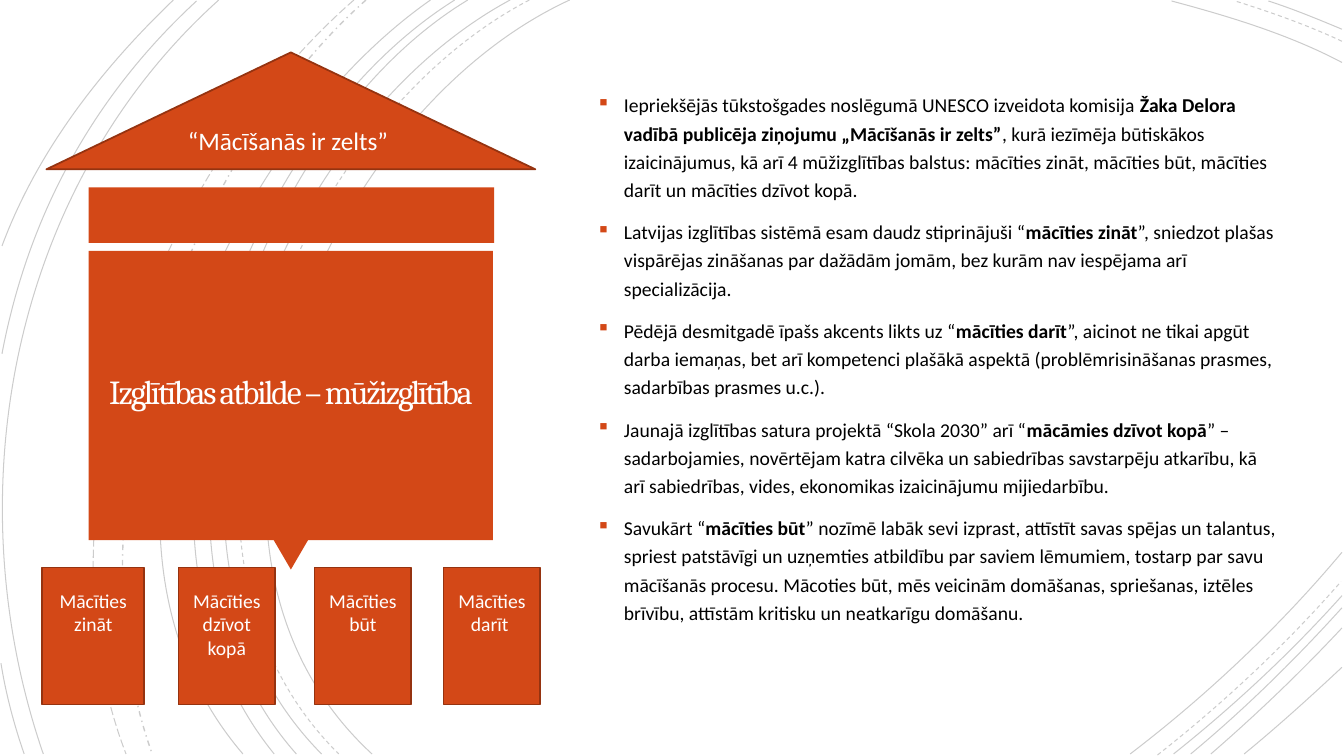
import pptx
import pptx.util
import pptx.dml.color
import pptx.enum.dml
import pptx.enum.shapes
import pptx.enum.text
import pptx.oxml.ns
import lxml.etree

Inches, Pt, qn = pptx.util.Inches, pptx.util.Pt, pptx.oxml.ns.qn
SHAPE = pptx.enum.shapes.MSO_SHAPE
DASH = pptx.enum.dml.MSO_LINE
ANCHOR = pptx.enum.text.MSO_ANCHOR
ALIGN = pptx.enum.text.PP_ALIGN

ORANGE, BROWN, WHITE, BLACK = "D34817", "953310", "FFFFFF", "000000"

# Content
TITLE = "Izglītības atbilde – mūžizglītība"
ROOF = "“Mācīšanās ir zelts” "
PILLARS = [  # left, width, text
    (0.42, 1.01, "Mācīties zināt"),
    (1.77, 0.96, "Mācīties dzīvot kopā"),
    (3.12, 0.96, "Mācīties būt"),
    (4.4, 0.96, "Mācīties darīt "),
]
POINTS = [  # plain, bold, plain
    ("Iepriekšējās tūkstošgades noslēgumā UNESCO izveidota komisija ",
     "Žaka Delora vadībā publicēja ziņojumu „Mācīšanās ir zelts”",
     ", kurā iezīmēja būtiskākos izaicinājumus, kā arī 4 mūžizglītības balstus: "
     "mācīties zināt, mācīties būt, mācīties darīt un mācīties dzīvot kopā."),
    ("Latvijas izglītības sistēmā esam daudz stiprinājuši “", "mācīties zināt",
     "”, sniedzot plašas vispārējas zināšanas par dažādām jomām, "
     "bez kurām nav iespējama arī specializācija. "),
    ("Pēdējā desmitgadē īpašs akcents likts uz “", "mācīties darīt",
     "”, aicinot ne tikai apgūt darba iemaņas, bet arī kompetenci plašākā aspektā "
     "(problēmrisināšanas prasmes, sadarbības prasmes u.c.)."),
    ("Jaunajā izglītības satura projektā “Skola 2030” arī “", "mācāmies dzīvot kopā",
     "” – sadarbojamies, novērtējam katra cilvēka un sabiedrības savstarpēju atkarību, "
     "kā arī sabiedrības, vides, ekonomikas izaicinājumu mijiedarbību. "),
    ("Savukārt “", "mācīties būt",
     "” nozīmē labāk sevi izprast, attīstīt savas spējas un talantus, spriest patstāvīgi "
     "un uzņemties atbildību par saviem lēmumiem, tostarp par savu mācīšanās procesu. "
     "Mācoties būt, mēs veicinām domāšanas, spriešanas, iztēles brīvību, "
     "attīstām kritisku un neatkarīgu domāšanu."),
]

# Background arcs by dash style: start, two control points, end
ARCS = {
    DASH.SOLID: [
        (5.65, 0, 3.15, 1.15, 1.43, 5.4, 3.69, 7.48),
        (5.06, 0, 2.7, 1.27, 1.1, 5.37, 3.19, 7.48),
        (4.64, 0, 2.44, 1.33, 1.1, 5.41, 2.94, 7.48),
        (4.51, 0, 2.31, 1.38, 0.97, 5.33, 2.72, 7.48),
        (4.27, 0, 2.17, 1.47, 0.53, 5.29, 2.41, 7.48),
        (2.17, 0, 0.11, 1.85, -0.46, 4.9, 0.43, 7.48),
        (1.95, 0.01, 0.92, 0.96, 0.28, 2.14, 0.02, 3.51),
        (0.01, 6.58, 0.06, 6.89, 0.14, 7.19, 0.24, 7.48),
        (1.72, 0, 1, 0.69, 0.37, 1.5, 0.02, 2.44),
        (13.31, 0.62, 12.78, 0.34, 12.18, 0.16, 11.62, 0.01),
        (13.31, 0.29, 13.07, 0.19, 12.83, 0.09, 12.58, 0.01),
        (11.21, 7.48, 11.97, 6.9, 12.69, 6.22, 13.31, 5.48),
        (11.64, 7.48, 12.23, 7.01, 12.8, 6.48, 13.31, 5.91),
        (11.81, 7.48, 12.34, 7.04, 12.84, 6.55, 13.31, 6.03),
        (12.01, 7.48, 12.46, 7.09, 12.9, 6.67, 13.31, 6.23),
        (12.34, 7.48, 12.67, 7.21, 12.99, 6.92, 13.31, 6.62),
    ],
    DASH.DASH: [
        (5.25, 0, 2.85, 1.25, 1.23, 5.37, 3.36, 7.48),
        (13.31, 0.41, 12.97, 0.25, 12.6, 0.12, 12.25, 0.01),
        (11.48, 7.49, 12.13, 6.98, 12.75, 6.4, 13.3, 5.77),
    ],
    DASH.DASH_DOT: [(3.63, 0, 1.76, 1.66, 0.65, 5.09, 1.51, 7.48)],
    DASH.LONG_DASH: [(3.51, 0, 1.57, 1.69, 0.29, 4.99, 1.25, 7.48)],
}


def color(value):
    return pptx.dml.color.RGBColor.from_string(value)


def add_arc(numbers, dash):
    lengths = [Inches(number) for number in numbers]
    points = list(zip(lengths[::2], lengths[1::2]))
    builder = page.shapes.build_freeform(*points[0])
    builder.add_line_segments(points[1:], close=False)
    arc = builder.convert_to_shape()
    # Turn the three straight segments into one cubic curve
    segments = list(arc._element.iter(qn("a:lnTo")))
    curve = lxml.etree.Element(qn("a:cubicBezTo"))
    segments[0].addprevious(curve)
    for segment in segments:
        curve.append(segment[0])
        segment.getparent().remove(segment)
    arc.shadow.inherit = False
    arc.fill.background()
    arc.line.color.rgb = color(BLACK)
    arc.line.width = Pt(1 if dash == DASH.DASH_DOT else 0.75)
    arc.line.dash_style = dash
    ink = arc.line._ln.find(".//" + qn("a:srgbClr"))
    lxml.etree.SubElement(ink, qn("a:alpha"), val="20000")


def add_block(kind, left, top, width, height, outline=None):
    block = page.shapes.add_shape(kind, Inches(left), Inches(top), Inches(width), Inches(height))
    block.shadow.inherit = False
    block.fill.solid()
    block.fill.fore_color.rgb = color(ORANGE)
    if outline:
        block.line.color.rgb = color(outline)
        block.line.width = Pt(1.25)
    else:
        block.line.fill.background()
    return block


def style(para, size, font, ink, align=ALIGN.CENTER):
    para.alignment = align
    para.font.size = Pt(size)
    para.font.name = font
    para.font.color.rgb = color(ink)


def write(block, text, size, anchor=ANCHOR.MIDDLE, font="Calibri"):
    frame = block.text_frame
    frame.word_wrap = True
    frame.vertical_anchor = anchor
    para = frame.paragraphs[0]
    para.text = text
    style(para, size, font, WHITE)
    return frame


def add_bullet(para):
    props = para._p.get_or_add_pPr()
    props.set("marL", str(Inches(0.25)))
    props.set("indent", str(Inches(-0.25)))
    bullet_color = lxml.etree.Element(qn("a:buClr"))
    lxml.etree.SubElement(bullet_color, qn("a:srgbClr"), val=ORANGE)
    size = lxml.etree.Element(qn("a:buSzPct"), val="110000")
    face = lxml.etree.Element(qn("a:buFont"), typeface="Wingdings", charset="2")
    mark = lxml.etree.Element(qn("a:buChar"), char="§")  # small square in Wingdings
    # Bullet properties stand between spacing and default run properties
    for position, part in enumerate((bullet_color, size, face, mark), 2):
        props.insert(position, part)


deck = pptx.Presentation()
deck.slide_width, deck.slide_height = Inches(13.33), Inches(7.5)
page = deck.slides.add_slide(deck.slide_layouts[6])

# Background
for dash, arcs in ARCS.items():
    for arc in arcs:
        add_arc(arc, dash)

# House: beam, pointer and wall with the title
add_block(SHAPE.RECTANGLE, 0.88, 1.86, 4.02, 0.55)
pointer = add_block(SHAPE.ISOSCELES_TRIANGLE, 2.71, 5.35, 0.35, 0.3)
pointer.rotation = 180
add_block(SHAPE.RECTANGLE, 0.88, 2.49, 4.01, 2.87)
title = page.shapes.add_textbox(Inches(0.97), Inches(2.56), Inches(3.83), Inches(2.7))
title_para = write(title, TITLE, 24, font="Cambria").paragraphs[0]
title_para.line_spacing = 0.85
title_para.runs[0]._r.get_or_add_rPr().set("spc", "-150")

# Bulleted text
body = page.shapes.add_textbox(Inches(5.84), Inches(0.83), Inches(6.96), Inches(6.16)).text_frame
body.word_wrap = True
for index, parts in enumerate(POINTS):
    para = body.add_paragraph() if index else body.paragraphs[0]
    para.line_spacing = 1.2
    para.space_before = Pt(10)
    style(para, 14, "Calibri", BLACK, ALIGN.LEFT)
    add_bullet(para)
    for place, text in enumerate(parts):
        span = para.add_run()
        span.text = text
        span.font.bold = place == 1

# Pillars and roof
for left, width, text in PILLARS:
    pillar = add_block(SHAPE.FLOWCHART_PROCESS, left, 5.63, width, 1.36, BROWN)
    write(pillar, text, 14, ANCHOR.TOP).margin_top = Inches(0.21)
roof = add_block(SHAPE.ISOSCELES_TRIANGLE, 0.46, 0.52, 4.85, 1.16, BROWN)
write(roof, ROOF, 18)

deck.save("out.pptx")
